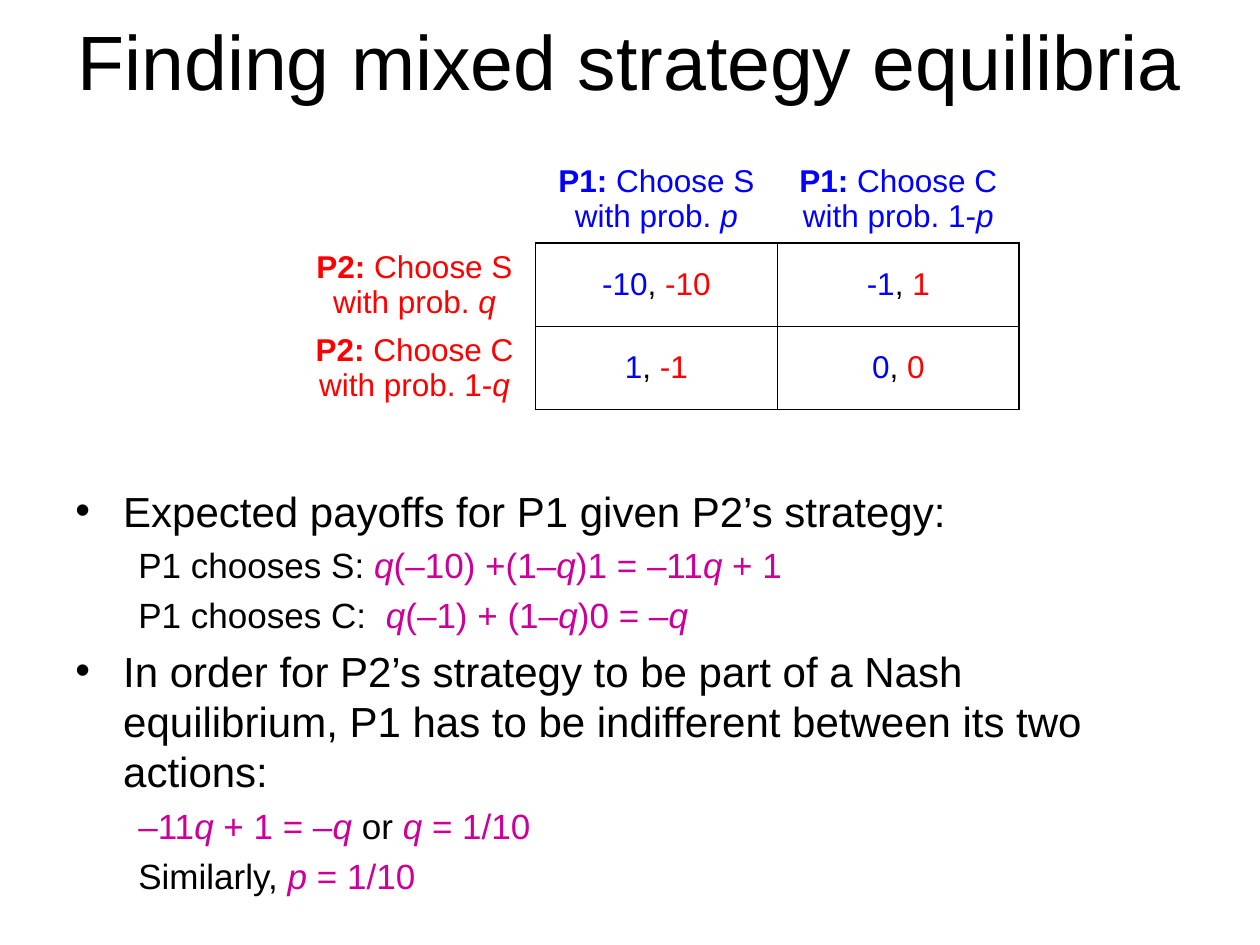
from dataclasses import dataclass

from lxml.etree import SubElement
from pptx import Presentation
from pptx.dml.color import RGBColor
from pptx.enum.text import MSO_ANCHOR, PP_ALIGN
from pptx.oxml.ns import qn
from pptx.util import Inches, Pt


@dataclass(frozen=True)
class Theme:
    font: str = "Arial"
    ink: str = "000000"
    paper: str = "FFFFFF"
    first: str = "0000FF"
    second: str = "FF0000"
    math: str = "CC0099"
    title: int = 44
    point: int = 24
    detail: int = 20
    cell: int = 18


T = Theme()
WIDE, HIGH = 10, 7.5

# A run is (text, colour[, bold]); text between asterisks is italic.
TITLE = [("Finding mixed strategy equilibria", T.ink)]
HEADS = [
    [[("P1:", T.first, True), (" Choose S", T.first)],
     [("with prob. *p*", T.first)]],
    [[("P1:", T.first, True), (" Choose C", T.first)],
     [("with prob. 1-*p*", T.first)]],
]
SIDES = [
    [[("P2:", T.second, True), (" Choose S with prob. *q*", T.second)]],
    [[("P2:", T.second, True), (" Choose C with prob. 1-*q*", T.second)]],
]
PAYOFFS = [[("-10", "-10"), ("-1", "1")], [("1", "-1"), ("0", "0")]]
POINTS = [  # (level, runs)
    (0, [("Expected payoffs for P1 given P2’s strategy:", T.ink)]),
    (1, [("P1 chooses S: ", T.ink),
         ("*q*(–10) +(1–*q*)1 = –11*q* + 1", T.math)]),
    (1, [("P1 chooses C: ", T.ink), (" *q*(–1) + (1–*q*)0 = –*q*", T.math)]),
    (0, [("In order for P2’s strategy to be part of a Nash equilibrium, "
          "P1 has to be indifferent between its two actions:", T.ink)]),
    (1, [("–11*q* + 1 = –*q*", T.math), (" or ", T.ink),
         ("*q* = 1/10", T.math)]),
    (1, [("Similarly, ", T.ink), ("*p* = 1/10", T.math)]),
]
LEVELS = [  # bullet, left margin, first-line indent, size
    ("•", 0.38, -0.38, T.point),
    (None, 0.81, -0.31, T.detail),
]


def write(para, runs, size, align=PP_ALIGN.LEFT, before=0):
    para.alignment = align
    para.space_before = Pt(before)
    for text, color, *bold in runs:
        for i, part in enumerate(text.split("*")):
            if part:
                run = para.add_run()
                run.text = part
                font = run.font
                font.name, font.size = T.font, Pt(size)
                font.bold, font.italic = bool(bold), i % 2 == 1
                font.color.rgb = RGBColor.from_string(color)


def indent(para, mark, left, first):
    props = para._p.get_or_add_pPr()
    props.set("marL", str(Inches(left)))
    props.set("indent", str(Inches(first)))
    if mark:
        SubElement(props, qn("a:buFont"), typeface=T.font)
        SubElement(props, qn("a:buChar"), char=mark)
    else:
        SubElement(props, qn("a:buNone"))


def border(cell, sides):
    """Rule the named sides of a cell and clear the others."""
    props = cell._tc.get_or_add_tcPr()
    for side in "LRTB":
        line = SubElement(props, qn("a:ln" + side), w=str(Pt(1)))
        if side in sides:
            fill = SubElement(line, qn("a:solidFill"))
            SubElement(fill, qn("a:srgbClr"), val=T.ink)
        else:
            SubElement(line, qn("a:noFill"))


def fill_cell(cell, paras, sides):
    border(cell, sides)
    cell.fill.solid()
    cell.fill.fore_color.rgb = RGBColor.from_string(T.paper)
    cell.vertical_anchor = MSO_ANCHOR.MIDDLE
    cell.margin_top = cell.margin_bottom = Inches(0.04)
    frame = cell.text_frame
    for i, runs in enumerate(paras):
        para = frame.add_paragraph() if i else frame.paragraphs[0]
        write(para, runs, T.cell, align=PP_ALIGN.CENTER)


def add_title(slide):
    title = slide.shapes.title
    title.left, title.top = Inches(0.05 * WIDE), 0
    title.width, title.height = Inches(0.9 * WIDE), Inches(0.95)
    title.text_frame.vertical_anchor = MSO_ANCHOR.MIDDLE
    write(title.text_frame.paragraphs[0], TITLE, T.title,
          align=PP_ALIGN.CENTER)


def add_game(slide):
    rows = [0.7, 0.66, 0.66]
    table = slide.shapes.add_table(
        3, 3, Inches(2.33), Inches(1.23), Inches(3 * 1.92),
        Inches(sum(rows))).table
    table.first_row = table.horz_banding = False
    for row, high in zip(table.rows, rows):
        row.height = Inches(high)
    fill_cell(table.cell(0, 0), [], "")
    for i in range(2):
        fill_cell(table.cell(0, i + 1), HEADS[i], "B")
        fill_cell(table.cell(i + 1, 0), SIDES[i], "R")
        for j, (one, two) in enumerate(PAYOFFS[i]):
            pair = [(one, T.first), (", ", T.ink), (two, T.second)]
            fill_cell(table.cell(i + 1, j + 1), [pair], "LRTB")


def add_points(slide):
    box = slide.shapes.add_textbox(
        Inches(0.05 * WIDE), Inches(3.8), Inches(0.9 * WIDE), Inches(3.28))
    frame = box.text_frame
    frame.word_wrap = True
    for i, (level, runs) in enumerate(POINTS):
        mark, left, first, size = LEVELS[level]
        para = frame.add_paragraph() if i else frame.paragraphs[0]
        para.level = level
        write(para, runs, size, before=0.23 * size if i else 0)
        indent(para, mark, left, first)


def main():
    deck = Presentation()
    deck.slide_width, deck.slide_height = Inches(WIDE), Inches(HIGH)
    slide = deck.slides.add_slide(deck.slide_layouts[5])
    add_title(slide)
    add_game(slide)
    add_points(slide)
    deck.save("out.pptx")


if __name__ == "__main__":
    main()
